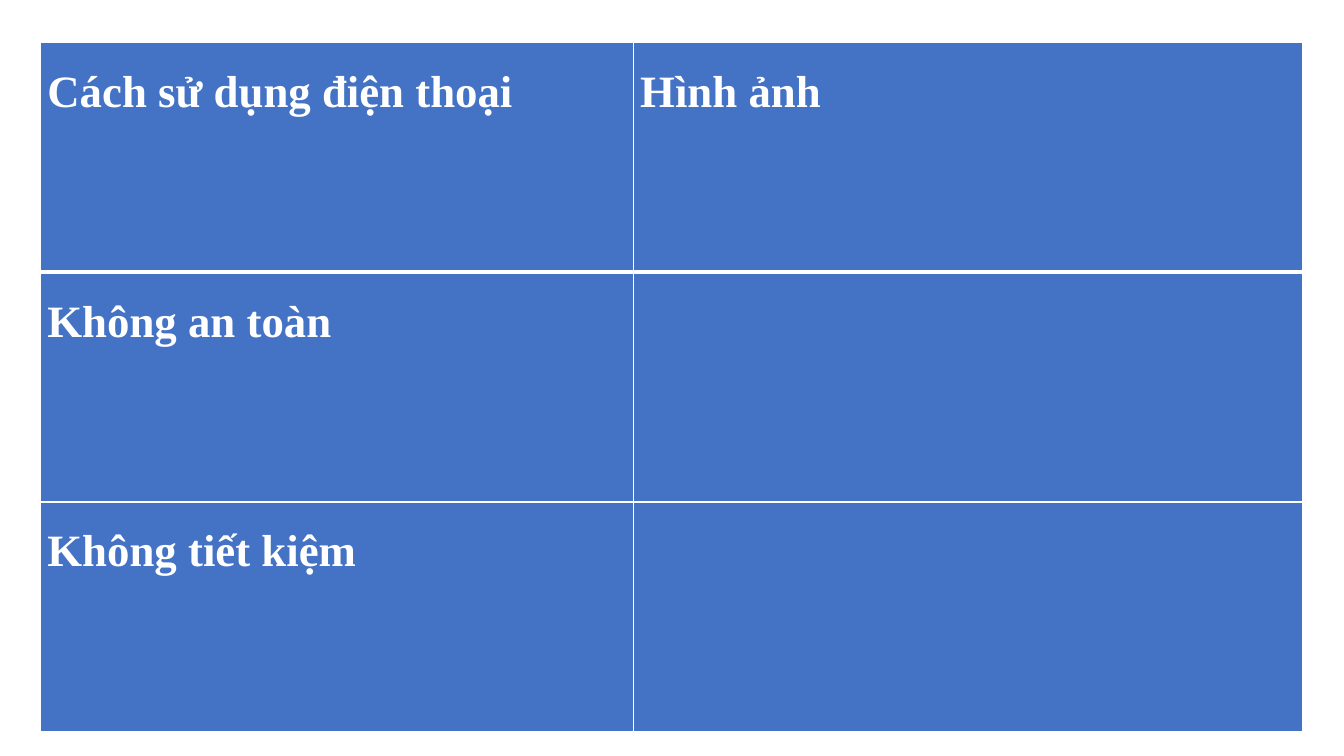
from dataclasses import dataclass

from lxml.etree import SubElement
from pptx import Presentation
from pptx.dml.color import RGBColor
from pptx.oxml.ns import qn
from pptx.util import Inches, Pt

ROWS = [
    ("Cách sử dụng điện thoại", "Hình ảnh"),
    ("Không an toàn", ""),
    ("Không tiết kiệm", ""),
]
COLUMN_WIDTHS = (5.88, 6.64)
ROW_HEIGHT = 2.28
TABLE_LEFT, TABLE_TOP = 0.4, 0.42


@dataclass(frozen=True)
class Theme:
    fill: str = "4472C4"
    light: str = "FFFFFF"
    font: str = "Times New Roman"
    size: int = 32
    border: int = 1
    header_border: int = 3


THEME = Theme()
CELL_MARGINS = {
    "margin_left": Inches(0.07),
    "margin_right": Inches(0.07),
    "margin_top": 0,
    "margin_bottom": 0,
}
FONT_FORMAT = {"name": THEME.font, "size": Pt(THEME.size), "bold": True}


def set_borders(cell, widths):
    """Draw the cell borders; widths maps each side (L, R, T, B) to points."""
    properties = cell._tc.get_or_add_tcPr()
    for position, (side, width) in enumerate(widths.items()):
        line = properties.makeelement(qn(f"a:ln{side}"), {"w": str(Pt(width))})
        fill = SubElement(line, qn("a:solidFill"))
        SubElement(fill, qn("a:srgbClr"), val=THEME.light)
        properties.insert(position, line)


def format_cell(cell, text, row_index):
    for name, value in CELL_MARGINS.items():
        setattr(cell, name, value)
    cell.fill.solid()
    cell.fill.fore_color.rgb = RGBColor.from_string(THEME.fill)
    set_borders(cell, {
        "L": THEME.border,
        "R": THEME.border,
        "T": THEME.header_border if row_index == 1 else THEME.border,
        "B": THEME.header_border if row_index == 0 else THEME.border,
    })
    cell.text = text
    paragraph = cell.text_frame.paragraphs[0]
    paragraph.line_spacing = 1.5
    for name, value in FONT_FORMAT.items():
        setattr(paragraph.font, name, value)
    paragraph.font.color.rgb = RGBColor.from_string(THEME.light)


def add_phone_use_table(slide):
    table = slide.shapes.add_table(
        len(ROWS), len(COLUMN_WIDTHS),
        Inches(TABLE_LEFT), Inches(TABLE_TOP),
        Inches(sum(COLUMN_WIDTHS)), Inches(ROW_HEIGHT * len(ROWS)),
    ).table
    for column, width in zip(table.columns, COLUMN_WIDTHS):
        column.width = Inches(width)
    for row_index, texts in enumerate(ROWS):
        table.rows[row_index].height = Inches(ROW_HEIGHT)
        for column_index, text in enumerate(texts):
            format_cell(table.cell(row_index, column_index), text, row_index)


def main():
    presentation = Presentation()
    presentation.slide_width = Inches(13.33)
    presentation.slide_height = Inches(7.5)
    blank_layout = presentation.slide_layouts[6]
    add_phone_use_table(presentation.slides.add_slide(blank_layout))
    presentation.save("out.pptx")


if __name__ == "__main__":
    main()
